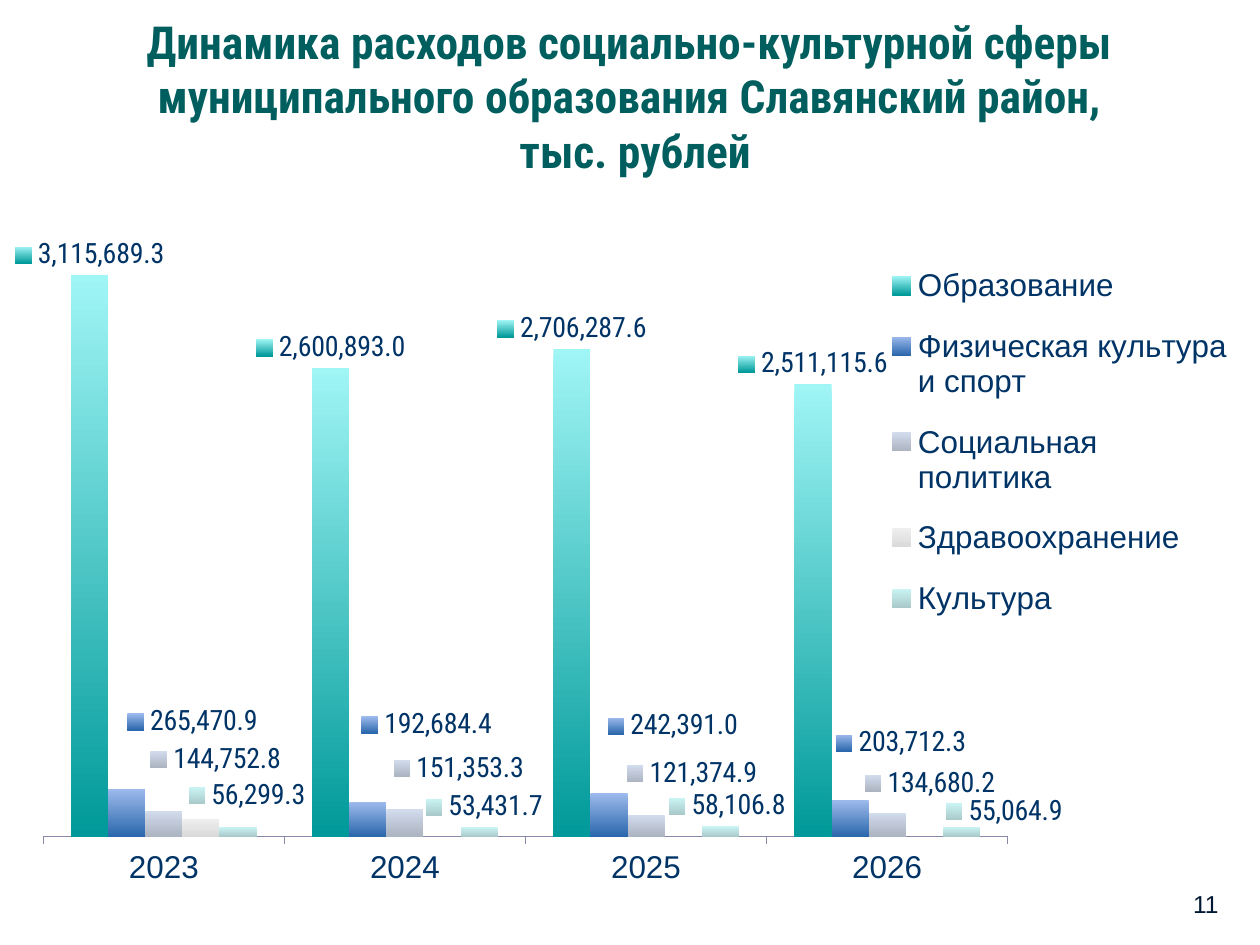
from copy import deepcopy
from dataclasses import dataclass

from lxml import etree
from pptx import Presentation
from pptx.chart.data import CategoryChartData
from pptx.dml.color import RGBColor
from pptx.enum.chart import XL_CHART_TYPE, XL_LABEL_POSITION, XL_LEGEND_POSITION, XL_TICK_MARK
from pptx.enum.text import MSO_ANCHOR, MSO_AUTO_SIZE, PP_ALIGN
from pptx.oxml.ns import qn
from pptx.util import Emu, Pt

COLUMNS = XL_CHART_TYPE.COLUMN_CLUSTERED
OUTSIDE_END = XL_LABEL_POSITION.OUTSIDE_END
LEGEND_RIGHT = XL_LEGEND_POSITION.RIGHT
TICK_OUTSIDE, TICK_NONE = XL_TICK_MARK.OUTSIDE, XL_TICK_MARK.NONE
MIDDLE, BOTTOM = MSO_ANCHOR.MIDDLE, MSO_ANCHOR.BOTTOM
CENTER, RIGHT = PP_ALIGN.CENTER, PP_ALIGN.RIGHT
NO_AUTOFIT = MSO_AUTO_SIZE.NONE
PX_PER_INCH = 126
TITLE_ONLY = 5
CHART_WIDTH, CHART_HEIGHT = 1230, 724
CHART_2012 = "http://schemas.microsoft.com/office/drawing/2012/chart"
LABEL_EXTENSION = "{CE6537A1-D6FC-4f65-9D91-7224C49458BB}"


@dataclass(frozen=True)
class Theme:
    """Fonts, type sizes and colours of the slide."""

    heading_font: str = "Roboto Condensed"
    body_font: str = "Arial"
    title_size: int = 26
    chart_size: int = 18
    label_size: int = 16
    number_size: int = 14
    title: str = "005E5E"
    chart_text: str = "003366"
    number: str = "001933"
    axis: str = "8888A8"


@dataclass(frozen=True)
class Expense:
    """One spending area with its gradient and label shifts in px."""

    name: str
    values: tuple
    gradient: tuple
    labelled: bool = True
    shifts: tuple = ()


YEARS = ("2023", "2024", "2025", "2026")
EXPENSES = (
    Expense("Образование", (3115689.3, 2600893, 2706287.6, 2511115.6), ("A0F5F5", "009999")),
    Expense("Физическая культура и спорт", (265470.9, 192684.4, 242391, 203712.3),
            ("9DBAEC", "2A67AC"), shifts=((66, -47), (59, -57), (64, -47), (51, -37))),
    Expense("Социальная политика", (144752.8, 151353.3, 121374.9, 134680.2),
            ("D2DCEC", "ACB3C1"), shifts=((52, -31), (54, -21), (46, -21), (43, -9))),
    Expense("Здравоохранение", (100000, 0, None, 0), ("EEEEEE", "DADADA"), labelled=False),
    Expense("Культура", (56299.3, 53431.7, 58106.8, 55064.9),
            ("CAF4F4", "AACACA"), shifts=((9, -11), (5, 0), (7, 0), (43, 5))),
)


def px(length):
    """Turn px into EMU."""
    return Emu(round(length * 914400 / PX_PER_INCH))


def format_font(font, *, name, size, color, bold=False):
    """Set the whole look of a font."""
    font.name, font.size, font.bold = name, Pt(size), bold
    font.color.rgb = RGBColor.from_string(color)


def write_text(text_frame, text, *, align, anchor, **look):
    """Write one paragraph, breaking lines at each newline."""
    text_frame.word_wrap = True
    text_frame.auto_size = NO_AUTOFIT
    text_frame.vertical_anchor = anchor
    paragraph = text_frame.paragraphs[0]
    paragraph.alignment = align
    for index, line in enumerate(text.split("\n")):
        if index:
            paragraph.add_line_break()
        run = paragraph.add_run()
        run.text = line
        format_font(run.font, **look)


def add_value(parent, name, value):
    """Append a chart element that carries one value."""
    etree.SubElement(parent, name).set("val", str(value))


def manual_layout(x, y, size=None, target=None):
    """Build a layout in px: a shift, or a box when a size is given."""
    layout = etree.Element(qn("c:layout"))
    values = {"layoutTarget": target} if target else {}
    if size:
        values.update(xMode="edge", yMode="edge")
    values.update(x=x / CHART_WIDTH, y=y / CHART_HEIGHT)
    if size:
        values.update(w=size[0] / CHART_WIDTH, h=size[1] / CHART_HEIGHT)
    manual = etree.SubElement(layout, qn("c:manualLayout"))
    for name, value in values.items():
        add_value(manual, qn(f"c:{name}"), value)
    return layout


class SlideBuilder:
    """Holds the theme and the current slide."""

    def __init__(self, slide, theme):
        """Keep the slide and its theme."""
        self.slide, self.theme = slide, theme

    def title(self, text, left, top, width, height):
        """Fill and place the title placeholder."""
        shape = self.slide.shapes.title
        shape.left, shape.top, shape.width, shape.height = map(px, (left, top, width, height))
        write_text(shape.text_frame, text, align=CENTER, anchor=MIDDLE, bold=True,
                   name=self.theme.heading_font, size=self.theme.title_size, color=self.theme.title)

    def page_number(self, text, left, top, width, height):
        """Add the page number."""
        shape = self.slide.shapes.add_textbox(*map(px, (left, top, width, height)))
        write_text(shape.text_frame, text, align=RIGHT, anchor=BOTTOM,
                   name=self.theme.body_font, size=self.theme.number_size, color=self.theme.number)

    def column_chart(self, years, expenses, left, top):
        """Add the clustered columns with axes, legend and labels."""
        data = CategoryChartData()
        data.categories = years
        for expense in expenses:
            data.add_series(expense.name, expense.values)
        box = map(px, (left, top, CHART_WIDTH, CHART_HEIGHT))
        chart = self.slide.shapes.add_chart(COLUMNS, *box, data).chart
        chart.has_title = False
        format_font(chart.font, name=self.theme.body_font, size=self.theme.chart_size,
                    color=self.theme.chart_text)
        self.axes(chart)
        self.legend(chart)
        plot = chart.plots[0]
        plot.gap_width, plot.overlap, plot.vary_by_categories = 150, 0, False
        for series, expense in zip(plot.series, expenses):
            self.gradient(series, expense.gradient)
            if expense.labelled:
                self.labels(series, expense.shifts)

    def axes(self, chart):
        """Format both axes and fix the plot area."""
        value_axis, category_axis = chart.value_axis, chart.category_axis
        value_axis.minimum_scale, value_axis.maximum_scale = 0, 3500000
        value_axis.has_major_gridlines = False
        value_axis.visible = False
        category_axis.major_tick_mark, category_axis.minor_tick_mark = TICK_OUTSIDE, TICK_NONE
        category_axis.format.line.color.rgb = RGBColor.from_string(self.theme.axis)
        category_axis.format.line.width = Pt(0.75)
        area = chart.element.find(".//" + qn("c:plotArea"))
        for old in area.findall(qn("c:layout")):
            area.remove(old)
        area.insert(0, manual_layout(24, 21, (968, 631), "inner"))

    def legend(self, chart):
        """Place the legend at the right, clear of the value labels."""
        chart.has_legend = True
        chart.legend.position = LEGEND_RIGHT
        chart.legend.include_in_layout = False
        element = chart.element.find(".//" + qn("c:legend"))
        for old in element.findall(qn("c:layout")):
            element.remove(old)
        element.find(qn("c:legendPos")).addnext(manual_layout(886, 58, (344, 398)))

    def gradient(self, series, colors):
        """Fill a series from top to bottom."""
        fill = series.format.fill
        fill.gradient()
        fill.gradient_angle = 270
        for stop, color in zip(fill.gradient_stops, colors):
            stop.color.rgb = RGBColor.from_string(color)

    def labels(self, series, shifts):
        """Show values with legend keys, moved by shifts without leader lines."""
        labels = series.data_labels
        labels.show_value = labels.show_legend_key = True
        labels.number_format, labels.number_format_is_linked = "#,##0.0", False
        labels.position = OUTSIDE_END
        format_font(labels.font, name=self.theme.heading_font, size=self.theme.label_size,
                    color=self.theme.chart_text)
        element = series._element.find(qn("c:dLbls"))
        for leader in element.findall(qn("c:showLeaderLines")):
            element.remove(leader)
        shared = list(element)
        for index, shift in enumerate(shifts):
            label = etree.Element(qn("c:dLbl"))
            add_value(label, qn("c:idx"), index)
            label.append(manual_layout(*shift))
            label.extend(deepcopy(shared))
            element.insert(index, label)
        add_value(element, qn("c:showLeaderLines"), 0)
        extension = etree.SubElement(etree.SubElement(element, qn("c:extLst")), qn("c:ext"))
        extension.set("uri", LABEL_EXTENSION)
        add_value(extension, f"{{{CHART_2012}}}showLeaderLines", 0)


def main():
    """Build and save the slide."""
    presentation = Presentation()
    presentation.slide_width, presentation.slide_height = px(1260), px(945)
    slide = presentation.slides.add_slide(presentation.slide_layouts[TITLE_ONLY])
    builder = SlideBuilder(slide, Theme())
    builder.title("Динамика расходов социально-культурной сферы муниципального образования "
                  "Славянский район,\n тыс. рублей", 15, 26, 1230, 139)
    builder.column_chart(YEARS, EXPENSES, 15, 185)
    builder.page_number("11", 937, 859, 294, 66)
    presentation.save("out.pptx")


if __name__ == "__main__":
    main()
